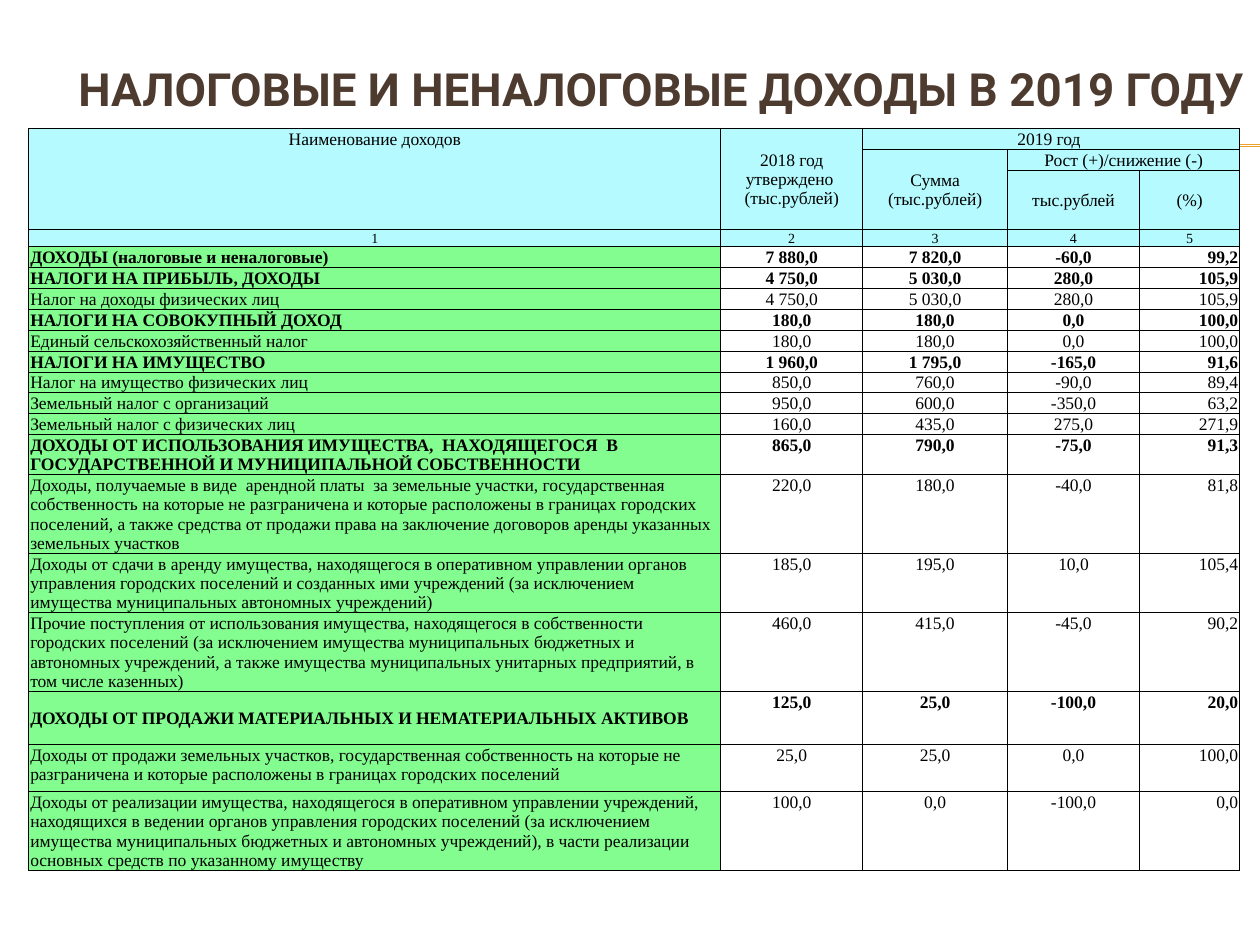
from typing import NamedTuple

from lxml.etree import SubElement
from pptx import Presentation
from pptx.dml.color import RGBColor
from pptx.enum.shapes import MSO_CONNECTOR
from pptx.enum.text import MSO_ANCHOR, MSO_AUTO_SIZE, PP_ALIGN
from pptx.oxml.ns import qn
from pptx.util import Cm, Pt

COLORS = {
    "title": "4E3B30", "rule": "F0A22E", "ink": "000000",
    "head": "B4FAFE", "name": "83FD8F", "data": "FFFFFF",
}
LEFT, MID, RIGHT, JUST = PP_ALIGN.LEFT, PP_ALIGN.CENTER, PP_ALIGN.RIGHT, PP_ALIGN.JUSTIFY
TOP, CORE = MSO_ANCHOR.TOP, MSO_ANCHOR.MIDDLE
WIDTHS = [13.95, 2.86, 2.92, 2.66, 2.02]
LINE = 0.41
HEADS = [LINE, LINE, 1.19, 0.35]


class Head(NamedTuple):
    row: int
    col: int
    text: str
    rows: int = 1
    cols: int = 1
    anchor: MSO_ANCHOR = CORE


class Item(NamedTuple):
    name: str
    nums: str
    bold: bool = False
    tall: float = LINE
    align: PP_ALIGN = JUST
    anchor: MSO_ANCHOR = TOP


TITLES = [
    Head(0, 0, "Наименование доходов", rows=3, anchor=TOP),
    Head(0, 1, "2018 год утверждено  (тыс.рублей)", rows=3),
    Head(0, 2, "2019 год ", cols=3),
    Head(1, 2, "Сумма (тыс.рублей)", rows=2),
    Head(1, 3, "Рост (+)/снижение (-)", cols=2),
    Head(2, 3, "тыс.рублей"),
    Head(2, 4, "(%)"),
]
ITEMS = [
    Item("ДОХОДЫ (налоговые и неналоговые)", "7 880,0|7 820,0|-60,0|99,2", True, align=LEFT),
    Item("НАЛОГИ НА ПРИБЫЛЬ, ДОХОДЫ", "4 750,0|5 030,0|280,0|105,9", True, align=LEFT),
    Item("Налог на доходы физических лиц", "4 750,0|5 030,0|280,0|105,9"),
    Item("НАЛОГИ НА СОВОКУПНЫЙ ДОХОД", "180,0|180,0|0,0|100,0", True),
    Item("Единый сельскохозяйственный налог", "180,0|180,0|0,0|100,0"),
    Item("НАЛОГИ НА ИМУЩЕСТВО", "1 960,0|1 795,0|-165,0|91,6", True),
    Item("Налог на имущество физических лиц", "850,0|760,0|-90,0|89,4"),
    Item("Земельный налог с организаций", "950,0|600,0|-350,0|63,2"),
    Item("Земельный налог с физических лиц", "160,0|435,0|275,0|271,9"),
    Item("ДОХОДЫ ОТ ИСПОЛЬЗОВАНИЯ ИМУЩЕСТВА,  НАХОДЯЩЕГОСЯ  В ГОСУДАРСТВЕННОЙ "
         "И МУНИЦИПАЛЬНОЙ СОБСТВЕННОСТИ",
         "865,0|790,0|-75,0|91,3", True, 0.8, LEFT, CORE),
    Item("Доходы, получаемые в виде  арендной платы  за земельные участки, "
         "государственная собственность на которые не разграничена и которые "
         "расположены в границах городских поселений, а также средства от продажи "
         "права на заключение договоров аренды указанных земельных участков",
         "220,0|180,0|-40,0|81,8", tall=1.58, align=LEFT),
    Item("Доходы от сдачи в аренду имущества, находящегося в оперативном управлении "
         "органов управления городских поселений и созданных ими учреждений "
         "(за исключением имущества муниципальных автономных учреждений)",
         "185,0|195,0|10,0|105,4", tall=1.19, align=LEFT),
    Item("Прочие поступления от использования имущества, находящегося в собственности "
         "городских поселений (за исключением имущества муниципальных бюджетных и "
         "автономных учреждений, а также имущества муниципальных унитарных "
         "предприятий, в том числе казенных)",
         "460,0|415,0|-45,0|90,2", tall=1.58, align=LEFT),
    Item("ДОХОДЫ ОТ ПРОДАЖИ МАТЕРИАЛЬНЫХ И НЕМАТЕРИАЛЬНЫХ АКТИВОВ",
         "125,0|25,0|-100,0|20,0", True, 1.07, LEFT, CORE),
    Item("Доходы от продажи земельных участков, государственная собственность на "
         "которые не разграничена и которые расположены в границах городских поселений",
         "25,0|25,0|0,0|100,0", tall=0.95, align=LEFT),
    Item("Доходы от реализации имущества, находящегося в оперативном управлении "
         "учреждений, находящихся в ведении органов управления городских поселений "
         "(за исключением имущества муниципальных бюджетных и автономных учреждений), "
         "в части реализации основных средств по указанному имуществу",
         "100,0|0,0|-100,0|0,0", tall=1.58, align=LEFT),
]


def paint(key: str) -> RGBColor:
    return RGBColor.from_string(COLORS[key])


def write(frame, text: str, size=10, bold=False, align=MID,
          face="Times New Roman", color="ink") -> None:
    para = frame.paragraphs[0]
    para.alignment = align
    run = para.add_run()
    run.text = text
    font = run.font
    font.name, font.size, font.bold = face, Pt(size), bold
    font.color.rgb = paint(color)


def style(cell, fill: str) -> None:
    props = cell._tc.get_or_add_tcPr()
    for side in ("lnL", "lnR", "lnT", "lnB"):
        edge = SubElement(props, qn(f"a:{side}"), w=str(Pt(0.5)))
        solid = SubElement(edge, qn("a:solidFill"))
        SubElement(solid, qn("a:srgbClr"), val=COLORS["ink"])
    cell.fill.solid()
    cell.fill.fore_color.rgb = paint(fill)
    cell.margin_left = cell.margin_right = cell.margin_top = Cm(0.03)
    cell.margin_bottom = 0


def rule(slide, top: float) -> None:
    line = slide.shapes.add_connector(
        MSO_CONNECTOR.STRAIGHT, Cm(1.42), Cm(top), Cm(25.4), Cm(top))
    line.line.color.rgb = paint("rule")
    line.line.width = Pt(0.75)
    SubElement(line._element.spPr, qn("a:effectLst"))


def title(slide) -> None:
    shape = slide.shapes.title
    shape.left, shape.top, shape.width, shape.height = Cm(1.27), 0, Cm(24.13), Cm(2.34)
    frame = shape.text_frame
    frame.auto_size = MSO_AUTO_SIZE.NONE
    frame.word_wrap = True
    frame.vertical_anchor = MSO_ANCHOR.BOTTOM
    frame.margin_left = frame.margin_right = Cm(0.1)
    frame.margin_bottom = 0
    write(frame, "НАЛОГОВЫЕ И НЕНАЛОГОВЫЕ ДОХОДЫ В 2019 ГОДУ",
          size=26.1, bold=True, face="Roboto", color="title")


def grid(slide) -> None:
    talls = HEADS + [item.tall for item in ITEMS]
    table = slide.shapes.add_table(
        len(talls), len(WIDTHS), Cm(0.58), Cm(2.59),
        Cm(sum(WIDTHS)), Cm(sum(talls))).table
    table.first_row = table.horz_banding = False
    for col, width in zip(table.columns, WIDTHS):
        col.width = Cm(width)
    for r, tall in enumerate(talls):
        table.rows[r].height = Cm(tall)
        for c in range(len(WIDTHS)):
            fill = "head" if r < len(HEADS) else "data" if c else "name"
            style(table.cell(r, c), fill)
    for head in TITLES:
        cell = table.cell(head.row, head.col)
        if head.rows * head.cols > 1:
            cell.merge(table.cell(head.row + head.rows - 1, head.col + head.cols - 1))
        cell.vertical_anchor = head.anchor
        write(cell.text_frame, head.text)
    for c in range(len(WIDTHS)):
        write(table.cell(len(HEADS) - 1, c).text_frame, str(c + 1), size=8)
    for r, item in enumerate(ITEMS, len(HEADS)):
        table.cell(r, 0).vertical_anchor = item.anchor
        texts = [item.name, *item.nums.split("|")]
        for c, (text, align) in enumerate(zip(texts, [item.align, MID, MID, MID, RIGHT])):
            write(table.cell(r, c).text_frame, text, bold=item.bold, align=align)


def main() -> None:
    deck = Presentation()
    deck.slide_width, deck.slide_height = Cm(25.4), Cm(19.05)
    slide = deck.slides.add_slide(deck.slide_layouts[5])
    for top in (2.92, 2.95):
        rule(slide, top)
    title(slide)
    grid(slide)
    deck.save("out.pptx")


if __name__ == "__main__":
    main()
